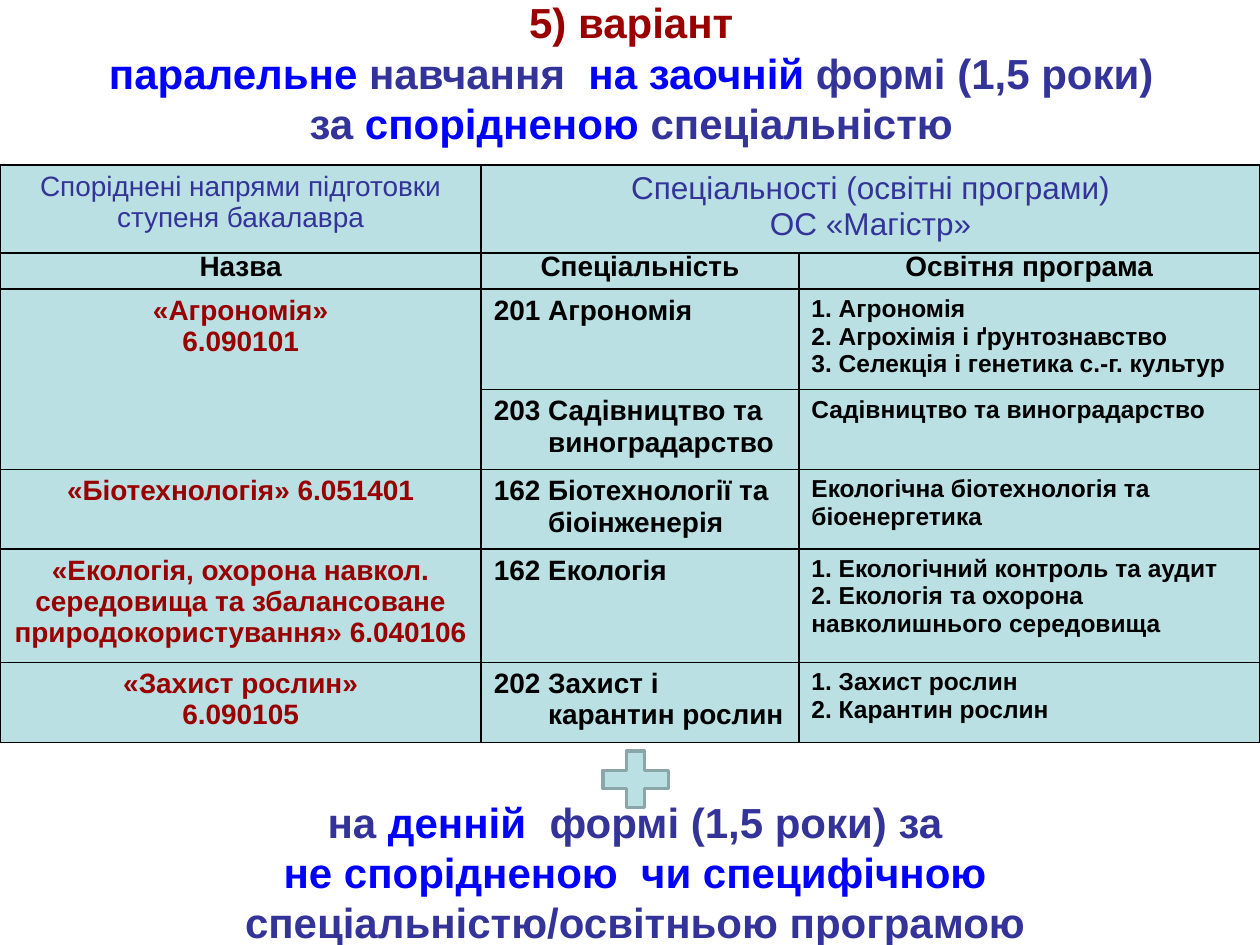
from pptx import Presentation
from pptx.dml.color import RGBColor
from pptx.enum.shapes import MSO_SHAPE
from pptx.enum.text import MSO_ANCHOR, MSO_AUTO_SIZE, PP_ALIGN as ALIGN
from pptx.oxml import parse_xml
from pptx.oxml.ns import nsdecls
from pptx.util import Pt

BLACK = RGBColor(0x00, 0x00, 0x00)
MAROON = RGBColor(0x99, 0x00, 0x00)
BLUE = RGBColor(0x00, 0x00, 0xFF)
INDIGO = RGBColor(0x33, 0x33, 0x99)
AQUA = RGBColor(0xBB, 0xE0, 0xE3)
GREY_TEAL = RGBColor(0x8A, 0xA6, 0xA8)

HEADING = {"size": 24, "bold": True}
BACHELOR_HEADER = {"size": 16, "bold": False, "color": INDIGO}
MASTER_HEADER = {"size": 18, "bold": False, "color": INDIGO}
COLUMN_HEADER = {"size": 16, "bold": True, "color": BLACK}
FIELD = {"size": 16, "bold": True, "color": MAROON}
SPECIALTY = {"size": 16, "bold": True, "color": BLACK}
PROGRAMME = {"size": 14, "bold": True, "color": BLACK}

TITLE = [[("5) варіант\v", MAROON), ("паралельне ", BLUE), ("навчання  ", INDIGO),
          ("на заочній ", BLUE), ("формі (1,5 роки)\vза ", INDIGO),
          ("спорідненою", BLUE), (" спеціальністю", INDIGO)]]
CONCLUSION = [[("на ", INDIGO), ("денній  ", BLUE), ("формі (1,5 роки) за", INDIGO)],
              [("не спорідненою  чи специфічною ", BLUE),
               ("спеціальністю/освітньою програмою", INDIGO)]]

COLUMN_WIDTHS = [275, 181.5, 263.5]
ROW_HEIGHTS = [50.3, 20.6, 57.4, 45.7, 45.4, 64.9, 45.7]
COLUMN_TITLES = ["Назва", "Спеціальність", "Освітня програма"]
BODY_ROWS = [
    (["«Агрономія»", "6.090101"], ["201 Агрономія"],
     ["1. Агрономія", "2. Агрохімія і ґрунтознавство",
      "3. Селекція і генетика с.-г. культур"]),
    ([], ["203 Садівництво та", "виноградарство"], ["Садівництво та виноградарство"]),
    (["«Біотехнологія» 6.051401"], ["162 Біотехнології та", "біоінженерія"],
     ["Екологічна біотехнологія та", "біоенергетика"]),
    (["«Екологія, охорона навкол. середовища та збалансоване "
      "природокористування» 6.040106"], ["162 Екологія"],
     ["1. Екологічний контроль та аудит", "2. Екологія та охорона",
      "навколишнього середовища"]),
    (["«Захист рослин»", "6.090105"], ["202 Захист і", "карантин рослин"],
     ["1. Захист рослин", "2. Карантин рослин"]),
]


def format_font(font, size, bold, color):
    """Apply the deck's font with the given size, weight and colour."""
    for name, value in {"name": "Arial", "size": Pt(size), "bold": bold}.items():
        setattr(font, name, value)
    font.color.rgb = color


def write_paragraphs(frame, paragraphs, align, style):
    """Fill a text frame with paragraphs made of (text, colour) runs."""
    for index, runs in enumerate(paragraphs):
        paragraph = frame.paragraphs[0] if index == 0 else frame.add_paragraph()
        paragraph.alignment = align
        for text, color in runs:
            for position, line in enumerate(text.split("\v")):
                if position:
                    paragraph.add_line_break()
                if line:
                    run = paragraph.add_run()
                    run.text = line
                    format_font(run.font, **{**style, "color": color})


def write_heading(shape, box, paragraphs, anchor):
    """Place a centred heading and write its coloured runs."""
    for name, value in zip(("left", "top", "width", "height"), box):
        setattr(shape, name, Pt(value))
    settings = {"word_wrap": True, "auto_size": MSO_AUTO_SIZE.NONE,
                "vertical_anchor": anchor}
    for name, value in settings.items():
        setattr(shape.text_frame, name, value)
    write_paragraphs(shape.text_frame, paragraphs, ALIGN.CENTER, HEADING)


def write_cell(cell, lines, style, align=ALIGN.CENTER):
    """Write one paragraph per line in a table cell."""
    paragraphs = [[(line, style["color"])] for line in lines]
    write_paragraphs(cell.text_frame, paragraphs, align, style)


def style_cell(cell):
    """Give a cell black borders and the aqua fill."""
    properties = cell._tc.get_or_add_tcPr()
    for side in "LRTB":
        properties.append(parse_xml(
            f'<a:ln{side} {nsdecls("a")} w="{Pt(1)}"><a:solidFill>'
            f'<a:srgbClr val="{BLACK}"/></a:solidFill></a:ln{side}>'))
    cell.fill.solid()
    cell.fill.fore_color.rgb = AQUA


def add_programme_table(slide):
    """Add the table of related fields, specialties and programmes."""
    table = slide.shapes.add_table(
        len(ROW_HEIGHTS), len(COLUMN_WIDTHS), Pt(0), Pt(94.3),
        Pt(sum(COLUMN_WIDTHS)), Pt(sum(ROW_HEIGHTS))).table
    for column, width in zip(table.columns, COLUMN_WIDTHS):
        column.width = Pt(width)
    for row, height in zip(table.rows, ROW_HEIGHTS):
        row.height = Pt(height)
    for cell in table.iter_cells():
        style_cell(cell)
    table.cell(0, 1).merge(table.cell(0, 2))
    table.cell(2, 0).merge(table.cell(3, 0))

    write_cell(table.cell(0, 0), ["Споріднені напрями підготовки ступеня бакалавра"],
               BACHELOR_HEADER)
    write_cell(table.cell(0, 1), ["Спеціальності (освітні програми)", "ОС «Магістр»"],
               MASTER_HEADER)
    for index, text in enumerate(COLUMN_TITLES):
        cell = table.cell(1, index)
        write_cell(cell, [text], COLUMN_HEADER)
        cell.text_frame.paragraphs[0].line_spacing = Pt(13)
    for index, (field, specialty, programmes) in enumerate(BODY_ROWS, start=2):
        write_cell(table.cell(index, 0), field, FIELD)
        write_cell(table.cell(index, 1), specialty, SPECIALTY, ALIGN.LEFT)
        write_cell(table.cell(index, 2), programmes, PROGRAMME, ALIGN.LEFT)
        for paragraph in table.cell(index, 1).text_frame.paragraphs[1:]:
            paragraph._p.get_or_add_pPr().set("marL", str(Pt(31)))


def add_plus(slide):
    """Add the plus sign between the table and the conclusion."""
    plus = slide.shapes.add_shape(MSO_SHAPE.MATH_PLUS, Pt(337.7), Pt(423.4),
                                  Pt(51), Pt(44))
    plus.shadow.inherit = False
    plus.fill.solid()
    plus.fill.fore_color.rgb = AQUA
    plus.line.color.rgb = GREY_TEAL
    plus.line.width = Pt(2)


def main():
    """Build the slide and save it."""
    presentation = Presentation()
    presentation.slide_width, presentation.slide_height = Pt(720), Pt(540)
    slide = presentation.slides.add_slide(presentation.slide_layouts[5])
    write_heading(slide.shapes.title, (36.7, 0, 648, 82.8), TITLE, MSO_ANCHOR.MIDDLE)
    box = (42.5, 451.4, 640.8, 94.3)
    conclusion = slide.shapes.add_textbox(*map(Pt, box))
    write_heading(conclusion, box, CONCLUSION, MSO_ANCHOR.TOP)
    add_plus(slide)
    add_programme_table(slide)
    presentation.save("out.pptx")


if __name__ == "__main__":
    main()
